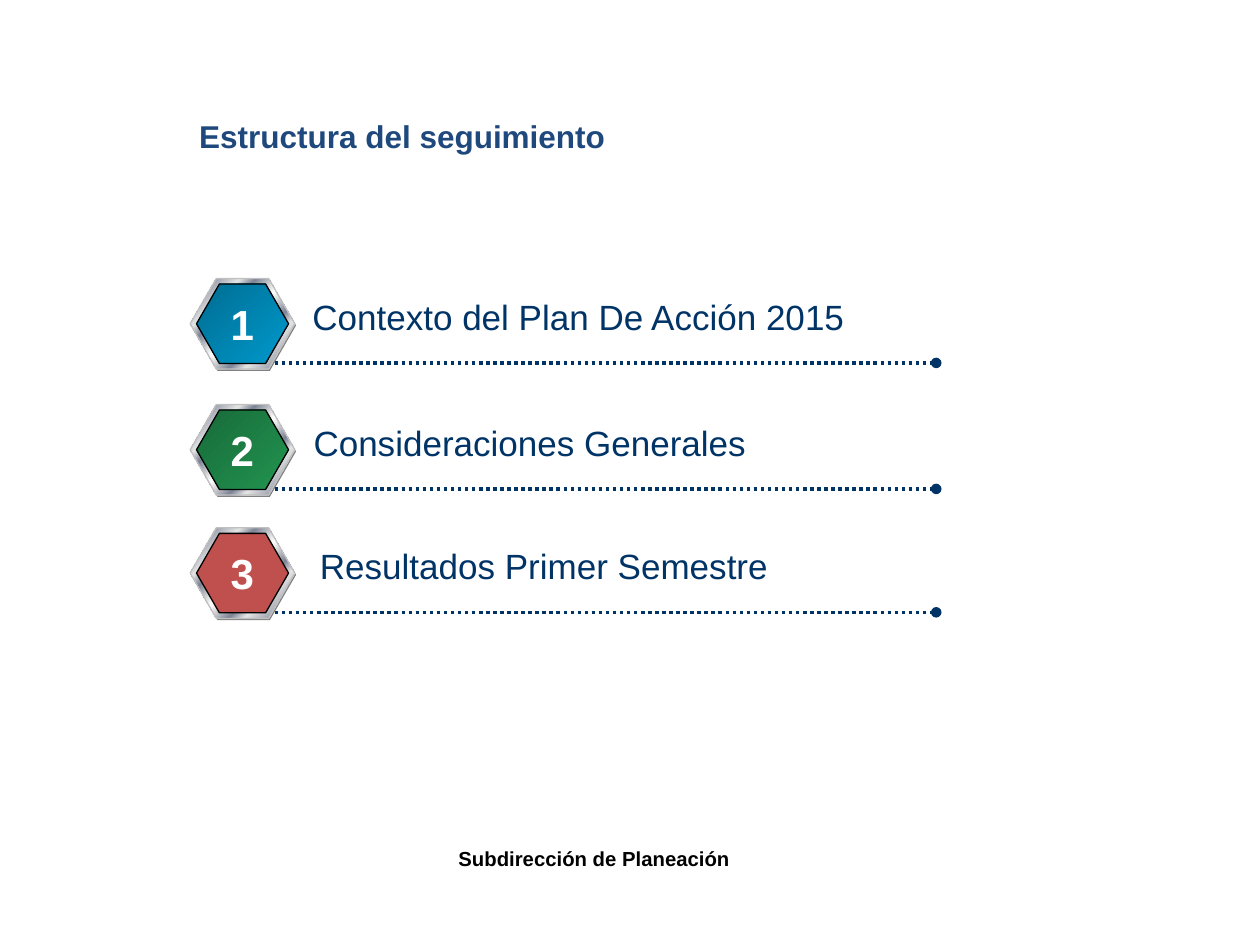
from lxml import etree
from pptx import Presentation
from pptx.dml.color import RGBColor
from pptx.enum.dml import MSO_LINE
from pptx.enum.shapes import MSO_CONNECTOR, MSO_SHAPE
from pptx.enum.text import MSO_ANCHOR, MSO_AUTO_SIZE, PP_ALIGN
from pptx.oxml.ns import qn
from pptx.util import Pt

HEXAGON = MSO_SHAPE.HEXAGON
STRAIGHT = MSO_CONNECTOR.STRAIGHT
DOTTED = MSO_LINE.ROUND_DOT
LEFT, CENTER = PP_ALIGN.LEFT, PP_ALIGN.CENTER
TOP, MIDDLE = MSO_ANCHOR.TOP, MSO_ANCHOR.MIDDLE
FIT_SHAPE = MSO_AUTO_SIZE.SHAPE_TO_FIT_TEXT

TITLE = "Estructura del seguimiento"
FOOTER = "Subdirección de Planeación"
ROWS = [
    {"text": "Contexto del Plan De Acción 2015", "top": 159.1, "text_left": 171.4,
     "width": 365.8, "wrap": True, "stops": [(0, "006D92"), (100, "0099CC")]},
    {"text": "Consideraciones Generales", "top": 231.1, "text_left": 172.1,
     "width": 263.5, "wrap": False, "stops": [(0, "186A39"), (100, "229450")]},
    {"text": "Resultados Primer Semestre", "top": 301.6, "text_left": 175.7,
     "width": 272.9, "wrap": False, "stops": [(0, "C0504D")]},
]
THEME = {
    "font": "Arial",
    "title": "1F497D", "text": "003366", "number": "FFFFFF", "footer": "000000",
    "shade": "808080", "rim": "C0C0C0", "outline": "000000",
    "metal": [(0, "E6E6E6"), (8, "7D8496"), (26, "E6E6E6"), (34, "7D8496"),
              (46, "E6E6E6"), (50, "FFFFFF"), (54, "E6E6E6"), (66, "7D8496"),
              (74, "E6E6E6"), (93, "7D8496"), (100, "E6E6E6")],
    "title_size": 18, "text_size": 20, "number_size": 24,
}
BADGE_LEFT = 108.7
BADGE_SIZE = (59.8, 51.8)
FACE_SIZE = (52.6, 45.4)
LINE_START, LINE_END = 157, 535


def color(name):
    return RGBColor.from_string(THEME.get(name, name))


def write(frame, text, size, color_name, bold=False, align=LEFT, anchor=TOP):
    frame.vertical_anchor = anchor
    paragraph = frame.paragraphs[0]
    paragraph.alignment = align
    run = paragraph.add_run()
    run.text = text
    run.font.name = THEME["font"]
    run.font.size = Pt(THEME[size])
    run.font.bold = bold
    run.font.color.rgb = color(color_name)
    return run


def add_text(slide, box, text, size, color_name, wrap=True, **style):
    frame = slide.shapes.add_textbox(*map(Pt, box)).text_frame
    frame.word_wrap = wrap
    frame.auto_size = FIT_SHAPE
    return write(frame, text, size, color_name, **style)


def fill_shape(shape, stops):
    if len(stops) == 1:
        shape.fill.solid()
        shape.fill.fore_color.rgb = color(stops[0][1])
        return
    shape.fill.gradient()
    shape.fill.gradient_angle = 315
    stop_list = shape._element.spPr.find(qn("a:gradFill")).find(qn("a:gsLst"))
    for stop in list(stop_list):
        stop_list.remove(stop)
    for position, value in stops:
        stop = etree.SubElement(stop_list, qn("a:gs"), pos=str(position * 1000))
        etree.SubElement(stop, qn("a:srgbClr"), val=value)


def add_hexagon(shapes, left, top, size, stops, line=None):
    shape = shapes.add_shape(HEXAGON, Pt(left), Pt(top), *map(Pt, size))
    shape.shadow.inherit = False
    shape.adjustments[0] = 0.289
    shape.adjustments[1] = 1.155
    fill_shape(shape, stops)
    if line:
        shape.line.color.rgb = color(line)
        shape.line.width = Pt(0.75)
    else:
        shape.line.fill.background()


def add_badge(slide, top, stops):
    shapes = slide.shapes.add_group_shape().shapes
    add_hexagon(shapes, BADGE_LEFT + 0.7, top + 1, BADGE_SIZE, [(0, THEME["shade"])])
    add_hexagon(shapes, BADGE_LEFT, top, BADGE_SIZE, THEME["metal"], "rim")
    add_hexagon(shapes, BADGE_LEFT + 3.6, top + 3.2, FACE_SIZE, stops, "outline")


def add_dotted_line(slide, y):
    connector = slide.shapes.add_connector(
        STRAIGHT, Pt(LINE_START), Pt(y), Pt(LINE_END), Pt(y))
    connector.line.color.rgb = color("text")
    connector.line.width = Pt(2)
    connector.line.dash_style = DOTTED
    properties = connector._element.spPr
    etree.SubElement(properties.find(qn("a:ln")), qn("a:tailEnd"), type="oval")
    etree.SubElement(properties, qn("a:effectLst"))


def main():
    presentation = Presentation()
    presentation.slide_width, presentation.slide_height = Pt(720), Pt(540)
    slide = presentation.slides.add_slide(presentation.slide_layouts[5])

    title = slide.shapes.title
    title.left, title.top, title.width, title.height = map(Pt, (106.6, 45.4, 577.4, 64))
    write(title.text_frame, TITLE, "title_size", "title", bold=True, anchor=MIDDLE)

    footer = add_text(slide, (254.9, 477.4, 244.8, 31.7), FOOTER,
                      "text_size", "footer", bold=True)
    footer._r.get_or_add_rPr().set("baseline", "30000")

    for number, row in enumerate(ROWS, 1):
        top = row["top"]
        add_badge(slide, top, row["stops"])
        add_dotted_line(slide, top + 48.3)
        add_text(slide, (row["text_left"], top + 6.3, row["width"], 31.7),
                 row["text"], "text_size", "text", wrap=row["wrap"])
        add_text(slide, (124.5, top + 8, 28, 36), str(number),
                 "number_size", "number", wrap=False, bold=True, align=CENTER)

    presentation.save("out.pptx")


if __name__ == "__main__":
    main()
